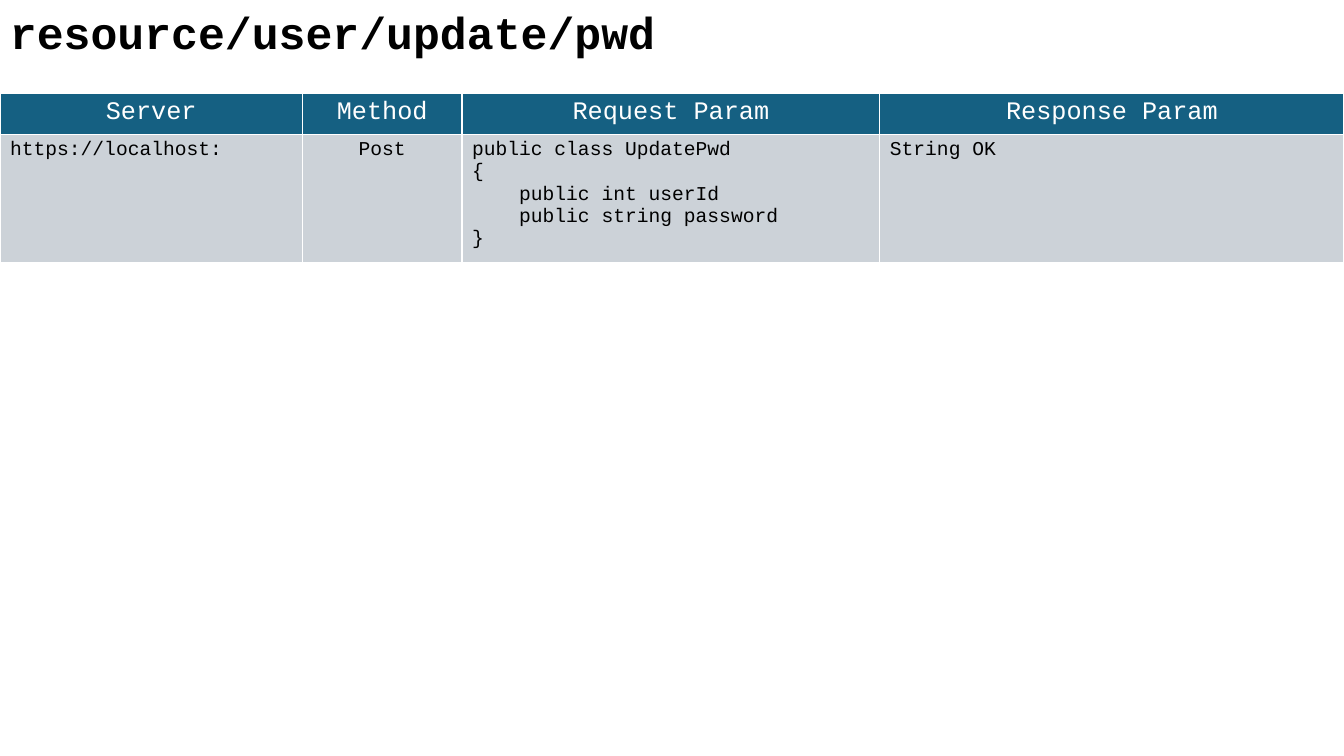
from lxml import etree
from pptx import Presentation
from pptx import util as u
from pptx.dml.color import RGBColor
from pptx.enum import text
from pptx.oxml.ns import qn

PX = 9525  # 96 px to the inch
FONT = "Courier New"
COLORS = {
    "ink": "000000",
    "header": "156082",
    "body": "CCD2D8",
    "white": "FFFFFF",
}
COLUMN_WIDTHS = [288, 152, 398, 442]
ROW_HEIGHTS = [39, 122]
HEADINGS = ["Server", "Method", "Request Param", "Response Param"]
ENDPOINT = [
    ["https://localhost:"],
    ["Post"],
    [
        "public class UpdatePwd",
        "{",
        "    public int userId",
        "    public string password",
        "}",
    ],
    ["String OK"],
]


def px(length):
    return u.Emu(length * PX)


def write_lines(frame, lines, size, color, align=text.PP_ALIGN.LEFT, bold=False):
    for number, line in enumerate(lines):
        paragraph = frame.add_paragraph() if number else frame.paragraphs[0]
        paragraph.alignment = align
        run = paragraph.add_run()
        run.text = line
        run.font.name = FONT
        run.font.size = u.Pt(size)
        run.font.bold = bold
        run.font.color.rgb = RGBColor.from_string(COLORS[color])


def add_title(slide, left, top, width, height, route):
    title = slide.shapes.add_textbox(px(left), px(top), px(width), px(height))
    frame = title.text_frame
    frame.word_wrap = True
    frame.auto_size = text.MSO_AUTO_SIZE.SHAPE_TO_FIT_TEXT
    write_lines(frame, [route], 32, "ink", bold=True)


def outline_cell(cell, color, points=1):
    """Draw all four borders; they must precede the fill in the cell XML."""
    properties = cell._tc.get_or_add_tcPr()
    for position, side in enumerate(("lnL", "lnR", "lnT", "lnB")):
        border = etree.Element(qn(f"a:{side}"), w=str(u.Pt(points)))
        fill = etree.SubElement(border, qn("a:solidFill"))
        etree.SubElement(fill, qn("a:srgbClr"), val=COLORS[color])
        properties.insert(position, border)


def add_endpoint_table(slide, left, top, width, height):
    frame = slide.shapes.add_table(
        len(ROW_HEIGHTS), len(COLUMN_WIDTHS), px(left), px(top), px(width), px(height)
    )
    table = frame.table
    for column, column_width in zip(table.columns, COLUMN_WIDTHS):
        column.width = px(column_width)
    for row, row_height in zip(table.rows, ROW_HEIGHTS):
        row.height = px(row_height)

    headings = [[heading] for heading in HEADINGS]
    styles = [("header", 18, "white"), ("body", 14, "ink")]
    for r, (entries, (fill, size, color)) in enumerate(zip([headings, ENDPOINT], styles)):
        for c, lines in enumerate(entries):
            cell = table.cell(r, c)
            cell.fill.solid()
            cell.fill.fore_color.rgb = RGBColor.from_string(COLORS[fill])
            outline_cell(cell, "white")
            centred = fill == "header" or HEADINGS[c] == "Method"
            align = text.PP_ALIGN.CENTER if centred else text.PP_ALIGN.LEFT
            write_lines(cell.text_frame, lines, size, color, align)


def main():
    deck = Presentation()
    deck.slide_width, deck.slide_height = px(1280), px(720)
    slide = deck.slides.add_slide(deck.slide_layouts[6])
    add_title(slide, 0, 0, 907, 61, "resource/user/update/pwd")
    add_endpoint_table(slide, 0, 89, sum(COLUMN_WIDTHS), sum(ROW_HEIGHTS))
    deck.save("out.pptx")


if __name__ == "__main__":
    main()
